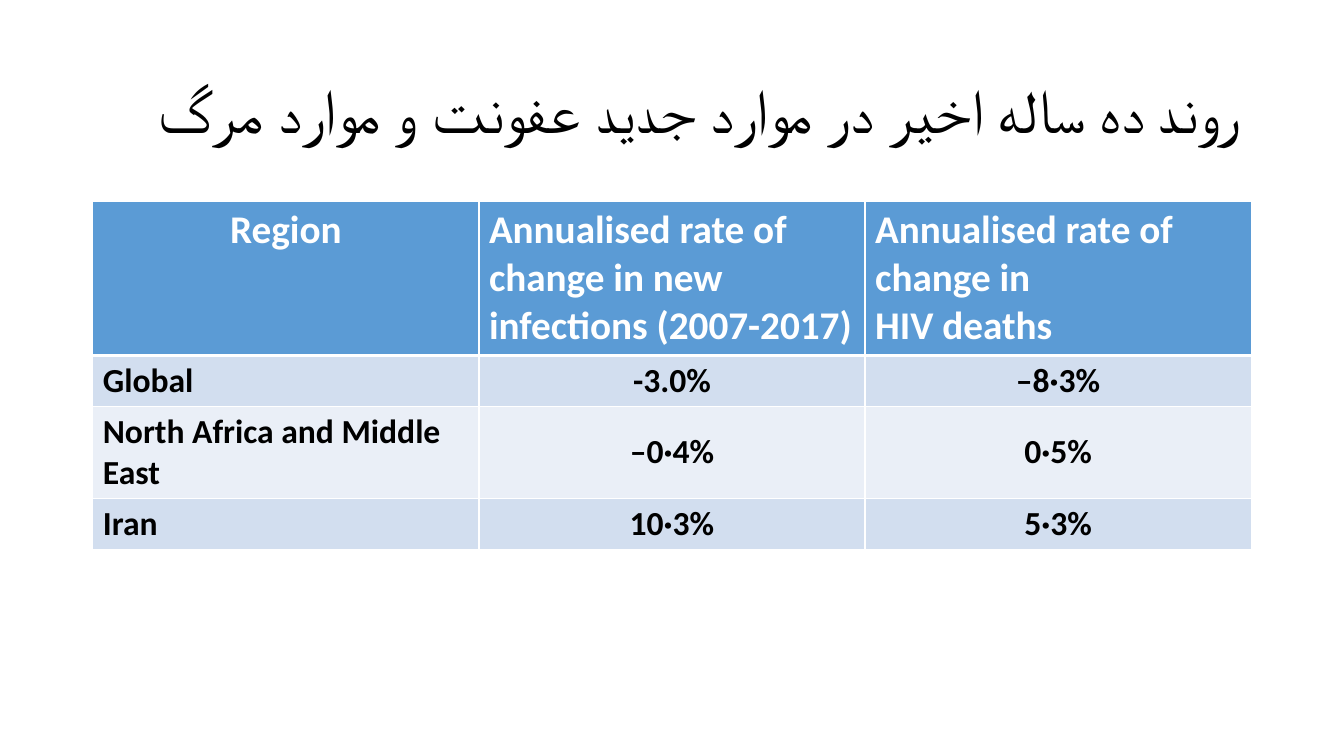
import dataclasses

import lxml.etree
import pptx
import pptx.dml.color
import pptx.enum.text
import pptx.oxml.ns
import pptx.presentation
import pptx.slide
import pptx.table
import pptx.util

Inches = pptx.util.Inches
ALIGN = pptx.enum.text.PP_ALIGN
ANCHOR = pptx.enum.text.MSO_ANCHOR

FONT = "Calibri"
COLORS = {
    "text": "000000",
    "white": "FFFFFF",
    "header": "5B9BD5",
    "band_dark": "D2DEEF",
    "band_light": "EAEFF7",
}
TITLE = "روند ده ساله اخیر در موارد جدید عفونت و موارد مرگ"
COLUMN_WIDTH = 3.83


@dataclasses.dataclass(frozen=True)
class RowStyle:
    fill: str
    color: str
    size: int
    alignments: tuple[ALIGN, ALIGN, ALIGN]
    bottom_border: float = 1


@dataclasses.dataclass(frozen=True)
class TableRow:
    texts: tuple[str, str, str]
    height: float
    style: RowStyle


HEADER = RowStyle("header", "white", 28, (ALIGN.CENTER, ALIGN.LEFT, ALIGN.LEFT), 3)
BODY_ALIGNMENTS = (ALIGN.LEFT, ALIGN.CENTER, ALIGN.CENTER)
DARK = RowStyle("band_dark", "text", 24, BODY_ALIGNMENTS)
LIGHT = RowStyle("band_light", "text", 24, BODY_ALIGNMENTS)

ROWS = [
    TableRow(
        (
            "Region",
            "Annualised rate of change in new infections (2007-2017)",
            "Annualised rate of change in\nHIV deaths",
        ),
        1.52,
        HEADER,
    ),
    TableRow(("Global", "-3.0%", "–8·3%"), 0.5, DARK),
    TableRow(("North Africa and Middle East", "–0·4%", "0·5%"), 0.91, LIGHT),
    TableRow(("Iran", "10·3%", "5·3%"), 0.5, DARK),
]


def rgb(name: str) -> pptx.dml.color.RGBColor:
    return pptx.dml.color.RGBColor.from_string(COLORS[name])


def format_runs(p, size: int, color: str, bold: bool = False) -> None:
    for r in p.runs:
        r.font.name = FONT
        r.font.size = pptx.util.Pt(size)
        r.font.bold = bold
        r.font.color.rgb = rgb(color)


def set_borders(cell: pptx.table._Cell, widths: dict[str, float]) -> None:
    """Add white borders ahead of the cell fill, as the schema requires."""
    qn = pptx.oxml.ns.qn
    tc_pr = cell._tc.get_or_add_tcPr()
    for i, (side, width) in enumerate(widths.items()):
        ln = lxml.etree.Element(qn(f"a:ln{side}"), w=str(pptx.util.Pt(width)))
        fill = lxml.etree.SubElement(ln, qn("a:solidFill"))
        lxml.etree.SubElement(fill, qn("a:srgbClr"), val=COLORS["white"])
        tc_pr.insert(i, ln)


def add_title(s: pptx.slide.Slide) -> None:
    sp = s.shapes.title
    sp.left, sp.top = Inches(0.48), Inches(0.4)
    sp.width, sp.height = Inches(11.93), Inches(1.45)
    tf = sp.text_frame
    tf.text = TITLE
    tf.word_wrap = True
    tf.auto_size = pptx.enum.text.MSO_AUTO_SIZE.NONE
    tf.vertical_anchor = ANCHOR.MIDDLE
    p = tf.paragraphs[0]
    p.alignment = ALIGN.RIGHT
    p.line_spacing = 0.9
    p._p.get_or_add_pPr().set("rtl", "1")
    format_runs(p, 44, "text")


def fill_cell(
    cell: pptx.table._Cell, text: str, alignment: ALIGN, style: RowStyle, top_border: float
) -> None:
    cell.fill.solid()
    cell.fill.fore_color.rgb = rgb(style.fill)
    set_borders(cell, {"L": 1, "R": 1, "T": top_border, "B": style.bottom_border})
    cell.vertical_anchor = ANCHOR.MIDDLE
    p = cell.text_frame.paragraphs[0]
    p.text = text
    p.alignment = alignment
    format_runs(p, style.size, style.color, bold=True)


def add_rate_table(s: pptx.slide.Slide) -> None:
    columns = len(ROWS[0].texts)
    table = s.shapes.add_table(
        len(ROWS), columns, Inches(0.92), Inches(2),
        Inches(columns * COLUMN_WIDTH), Inches(sum(row.height for row in ROWS)),
    ).table
    for column in table.columns:
        column.width = Inches(COLUMN_WIDTH)
    top_border = 1
    for i, row in enumerate(ROWS):
        table.rows[i].height = Inches(row.height)
        for j, (text, alignment) in enumerate(zip(row.texts, row.style.alignments)):
            fill_cell(table.cell(i, j), text, alignment, row.style, top_border)
        top_border = row.style.bottom_border
    table.cell(0, 0).vertical_anchor = ANCHOR.TOP


def main() -> None:
    prs = pptx.Presentation()
    prs.slide_width, prs.slide_height = Inches(13.33), Inches(7.5)
    s = prs.slides.add_slide(prs.slide_layouts.get_by_name("Title Only"))
    add_title(s)
    add_rate_table(s)
    prs.save("out.pptx")


if __name__ == "__main__":
    main()
